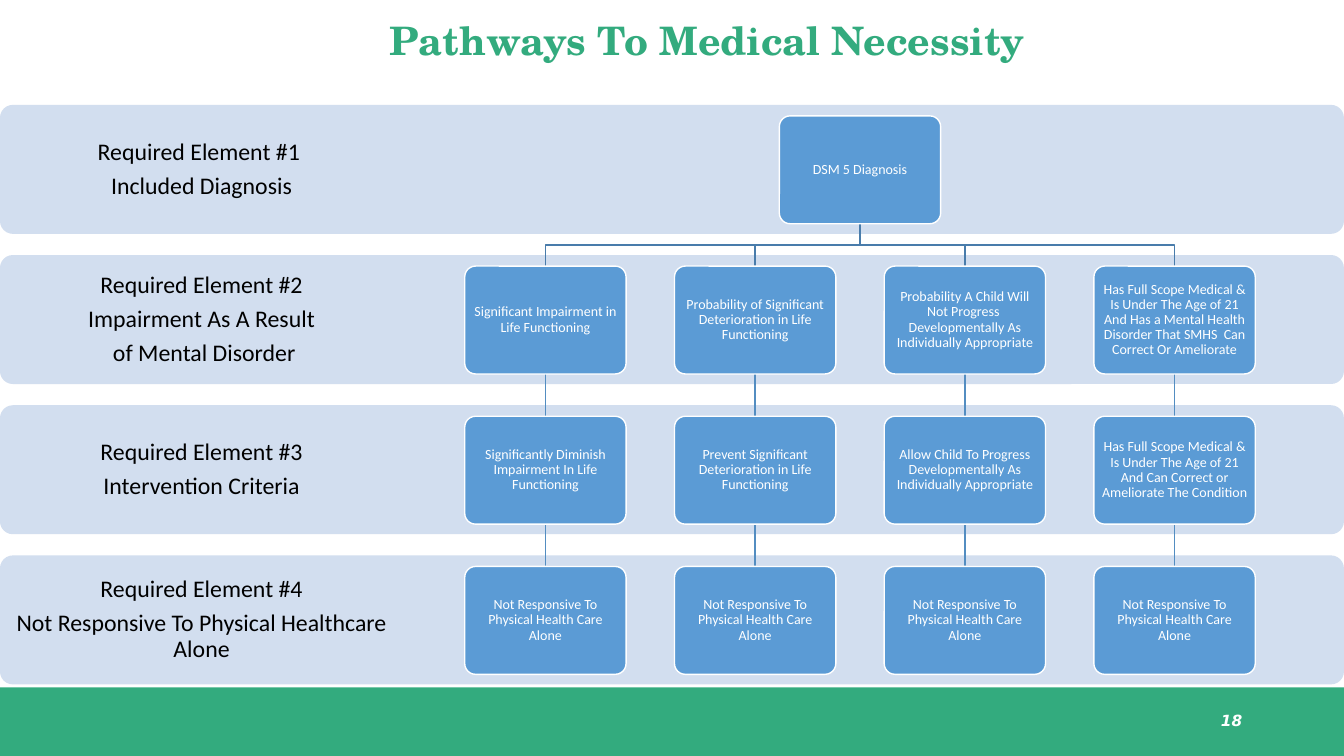
from dataclasses import dataclass

from lxml import etree
from pptx import Presentation
from pptx import util as u
from pptx.dml.color import RGBColor
from pptx.enum import shapes, text
from pptx.oxml import ns


@dataclass(frozen=True)
class Theme:
    green: str = "33AB7E"
    band: str = "D2DEEF"
    card: str = "5B9BD5"
    branch: str = "497CAB"
    link: str = "538DC1"
    black: str = "000000"
    white: str = "FFFFFF"
    title_font: str = "TeX Gyre Schola"
    body_font: str = "Calibri"
    number_font: str = "DejaVu Sans"
    title_size: float = 28
    label_size: float = 17
    card_size: float = 10
    number_size: float = 11
    line_width: float = 1


@dataclass(frozen=True)
class Level:
    label: tuple[str, ...]
    cards: tuple[str, ...]


@dataclass(frozen=True)
class Box:
    left: float
    top: float
    width: float
    height: float

    @property
    def center(self) -> float:
        return self.left + self.width / 2

    @property
    def bottom(self) -> float:
        return self.top + self.height

    def lengths(self) -> list[u.Length]:
        return [u.Inches(value) for value in (self.left, self.top, self.width, self.height)]


THEME = Theme()
SLIDE_WIDTH, SLIDE_HEIGHT = 13.33, 7.5
BAND_TOP, BAND_HEIGHT, ROW_PITCH = 1.04, 1.28, 1.49
LABEL_WIDTH = 4
CARD_LEFT, CARD_WIDTH, CARD_HEIGHT, COLUMN_PITCH = 4.61, 1.6, 1.07, 2.08
CARD_OFFSET = 0.11
CORNER = 0.1
COLUMNS = 4

LEVELS = (
    Level(("Required Element #1 ", "Included Diagnosis"), ("DSM 5 Diagnosis",)),
    Level(
        ("Required Element #2", "Impairment As A Result", " of Mental Disorder"),
        (
            "Significant Impairment in Life Functioning",
            "Probability of Significant Deterioration in Life Functioning",
            "Probability A Child Will Not Progress  Developmentally As Individually Appropriate",
            "Has Full Scope Medical & Is Under The Age of 21 And Has a Mental Health "
            "Disorder That SMHS  Can Correct Or Ameliorate",
        ),
    ),
    Level(
        ("Required Element #3", "Intervention Criteria"),
        (
            "Significantly Diminish Impairment In Life Functioning",
            "Prevent Significant Deterioration in Life Functioning",
            "Allow Child To Progress Developmentally As Individually Appropriate",
            "Has Full Scope Medical & Is Under The Age of 21 And Can Correct or "
            "Ameliorate The Condition",
        ),
    ),
    Level(
        ("Required Element #4", "Not Responsive To Physical Healthcare Alone"),
        ("Not Responsive To Physical Health Care Alone",) * COLUMNS,
    ),
)


def color(value: str) -> RGBColor:
    return RGBColor.from_string(value)


def write(shape, lines: tuple[str, ...], font: str, size: float, ink: str,
          inset: float | None = None, align=text.PP_ALIGN.CENTER,
          anchor=text.MSO_ANCHOR.MIDDLE, spacing: float = 0.9, after: float = 0,
          bold: bool = False, italic: bool = False) -> None:
    frame = shape.text_frame
    frame.word_wrap = True
    frame.vertical_anchor = anchor
    if inset is not None:
        frame.margin_left = frame.margin_right = u.Inches(inset)
        frame.margin_top = frame.margin_bottom = u.Inches(inset)
    frame.text = "\n".join(lines)
    for paragraph in frame.paragraphs:
        paragraph.alignment = align
        paragraph.line_spacing = spacing
        paragraph.space_before = u.Pt(0)
        paragraph.space_after = u.Pt(after)
        paragraph.font.name = font
        paragraph.font.size = u.Pt(size)
        paragraph.font.bold = bold
        paragraph.font.italic = italic
        paragraph.font.color.rgb = color(ink)


def add_panel(slide, kind, box: Box, fill: str, outline: str | None = None):
    panel = slide.shapes.add_shape(kind, *box.lengths())
    panel.shadow.inherit = False
    panel.fill.solid()
    panel.fill.fore_color.rgb = color(fill)
    if outline:
        panel.line.color.rgb = color(outline)
        panel.line.width = u.Pt(THEME.line_width)
    else:
        panel.line.fill.background()
    if kind == shapes.MSO_SHAPE.ROUNDED_RECTANGLE:
        panel.adjustments[0] = CORNER
    return panel


def add_band(slide, row: int, level: Level) -> None:
    top = BAND_TOP + row * ROW_PITCH
    add_panel(slide, shapes.MSO_SHAPE.ROUNDED_RECTANGLE,
              Box(0, top, SLIDE_WIDTH, BAND_HEIGHT), THEME.band)
    label = slide.shapes.add_textbox(*Box(0, top, LABEL_WIDTH, BAND_HEIGHT).lengths())
    write(label, level.label, THEME.body_font, THEME.label_size, THEME.black,
          inset=0.13, after=6)


def card_box(row: int, column: float) -> Box:
    return Box(CARD_LEFT + column * COLUMN_PITCH, BAND_TOP + CARD_OFFSET + row * ROW_PITCH,
               CARD_WIDTH, CARD_HEIGHT)


def add_card(slide, box: Box, caption: str) -> None:
    card = add_panel(slide, shapes.MSO_SHAPE.ROUNDED_RECTANGLE, box, THEME.card, THEME.white)
    write(card, (caption,), THEME.body_font, THEME.card_size, THEME.white, inset=0.04)


def add_branch(slide, parent: Box, child: Box) -> None:
    middle = (parent.bottom + child.top) / 2
    start, *turns = [
        (u.Inches(x), u.Inches(y))
        for x, y in ((parent.center, parent.bottom), (parent.center, middle),
                     (child.center, middle), (child.center, child.top))
    ]
    builder = slide.shapes.build_freeform(*start)
    builder.add_line_segments(turns, close=False)
    branch = builder.convert_to_shape()
    branch.shadow.inherit = False
    branch.fill.background()
    branch.line.color.rgb = color(THEME.branch)
    branch.line.width = u.Pt(THEME.line_width)


def add_link(slide, parent: Box, child: Box) -> None:
    link = slide.shapes.add_connector(
        shapes.MSO_CONNECTOR.STRAIGHT, u.Inches(parent.center), u.Inches(parent.bottom),
        u.Inches(child.center), u.Inches(child.top))
    link.line.color.rgb = color(THEME.link)
    link.line.width = u.Pt(THEME.line_width)
    etree.SubElement(link._element.spPr, ns.qn("a:effectLst"))


def main() -> None:
    presentation = Presentation()
    presentation.slide_width = u.Inches(SLIDE_WIDTH)
    presentation.slide_height = u.Inches(SLIDE_HEIGHT)
    slide = presentation.slides.add_slide(presentation.slide_layouts[5])

    title = slide.shapes.title
    title.left, title.top, title.width, title.height = Box(3.02, 0.15, 7.99, 0.53).lengths()
    write(title, ("Pathways To Medical Necessity",), THEME.title_font, THEME.title_size,
          THEME.green, anchor=text.MSO_ANCHOR.BOTTOM, bold=True)

    add_panel(slide, shapes.MSO_SHAPE.RECTANGLE, Box(0, 6.82, SLIDE_WIDTH, 0.68), THEME.green)
    number = slide.shapes.add_textbox(*Box(9.42, 6.95, 3, 0.4).lengths())
    write(number, ("18",), THEME.number_font, THEME.number_size, THEME.white,
          align=text.PP_ALIGN.RIGHT, spacing=1.0, bold=True, italic=True)

    for row, level in enumerate(LEVELS):
        add_band(slide, row, level)

    root = card_box(0, (COLUMNS - 1) / 2)
    for column in range(COLUMNS):
        add_branch(slide, root, card_box(1, column))
        for row in range(2, len(LEVELS)):
            add_link(slide, card_box(row - 1, column), card_box(row, column))

    for row, level in enumerate(LEVELS):
        first_column = (COLUMNS - len(level.cards)) / 2
        for column, caption in enumerate(level.cards):
            add_card(slide, card_box(row, first_column + column), caption)

    presentation.save("out.pptx")


if __name__ == "__main__":
    main()
